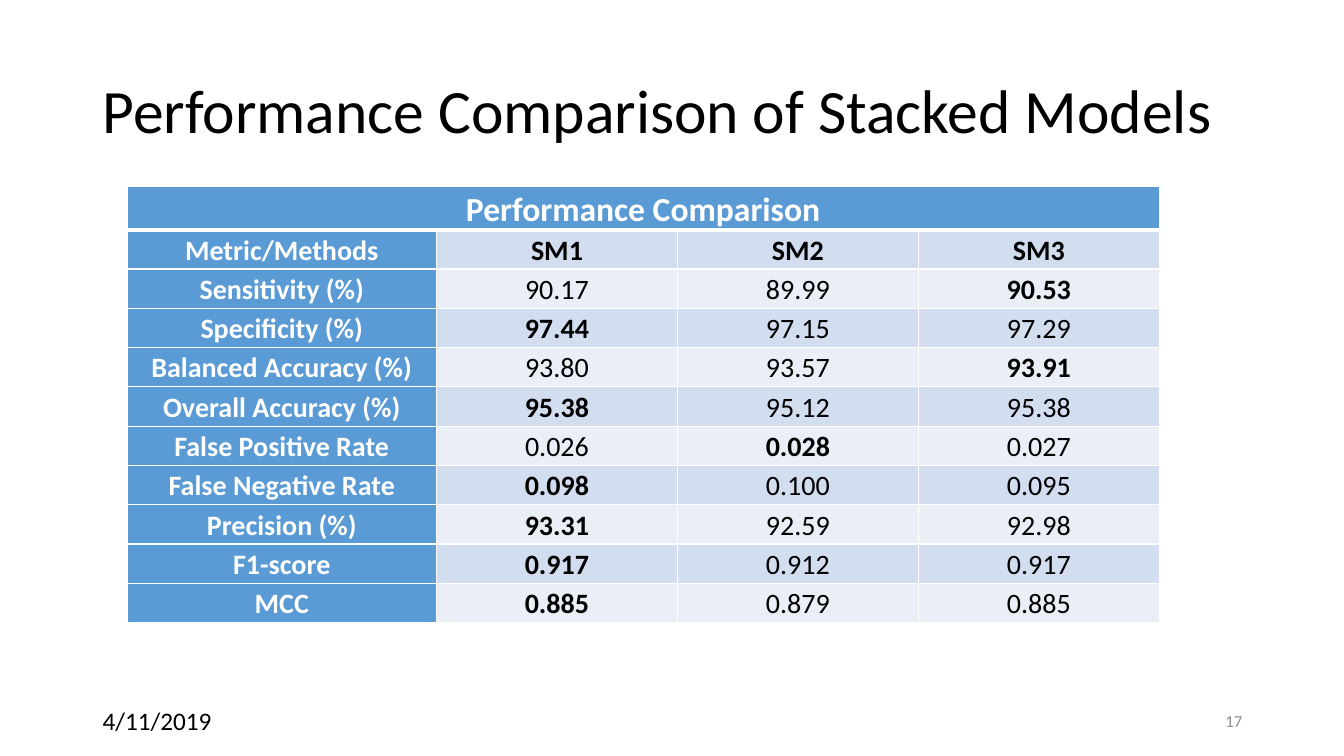
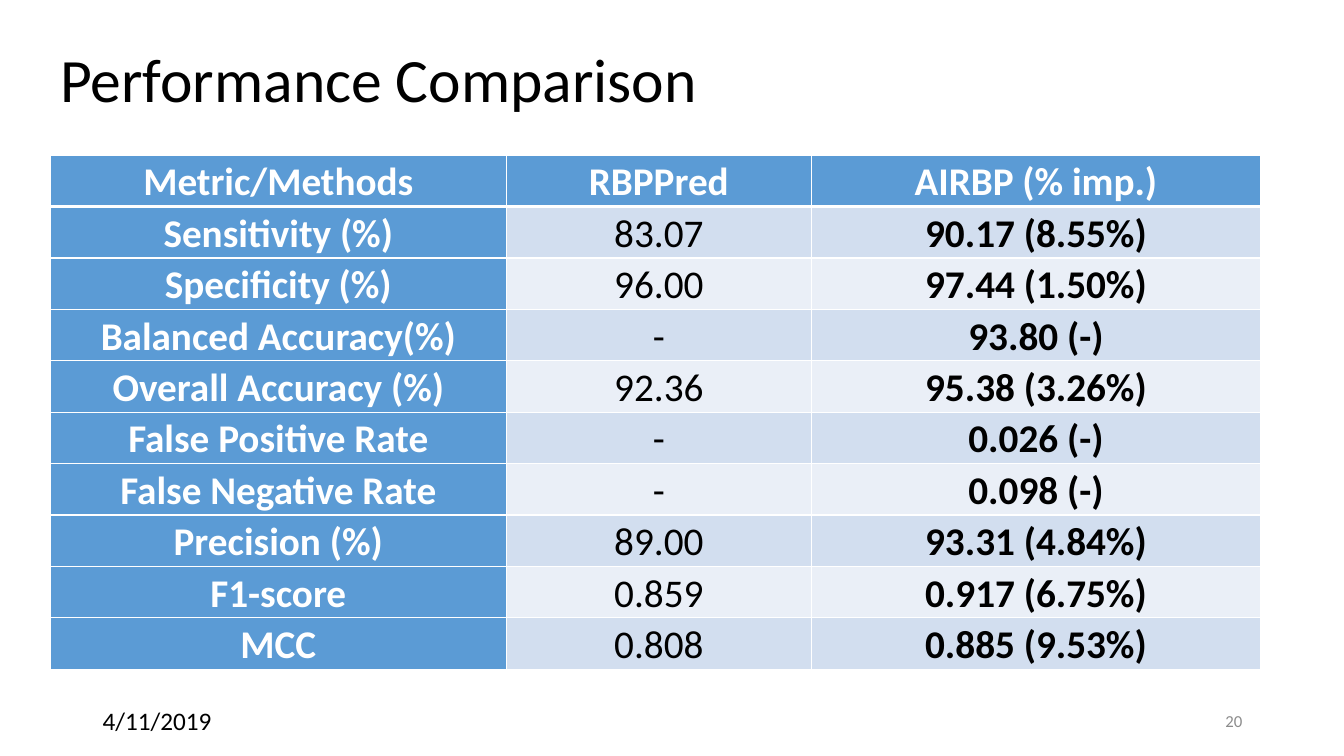
import dataclasses

import lxml.etree
import pptx
import pptx.dml.color
import pptx.enum.text
import pptx.oxml.ns
import pptx.util

Inches = pptx.util.Inches
Pt = pptx.util.Pt
ALIGN = pptx.enum.text.PP_ALIGN
ANCHOR = pptx.enum.text.MSO_ANCHOR


@dataclasses.dataclass(frozen=True)
class Theme:
    font: str = "Calibri"
    text: str = "000000"
    light: str = "FFFFFF"
    muted: str = "8C8C8C"
    header: str = "5B9BD5"
    bands: tuple = ("D2DEEF", "EAEFF7")
    title_size: int = 44
    date_size: int = 18
    number_size: int = 12
    rule: int = 1
    header_rule: int = 3


THEME = Theme()
DATE = "4/11/2019"
TITLE_SIZE = (11.5, 1.45)
FOOTER_TOP, FOOTER_SIZE = 6.95, (3, 0.4)
DATE_LEFT, NUMBER_LEFT = 0.92, 9.42

# Each body row: columns in bold, then the texts of its cells.
STACKED_CAPTION = "Performance Comparison"
STACKED_ROWS = [
    ((1, 2, 3), "Metric/Methods", "SM1", "SM2", "SM3"),
    ((3,), "Sensitivity (%)", "90.17", "89.99", "90.53"),
    ((1,), "Specificity (%)", "97.44", "97.15", "97.29"),
    ((3,), "Balanced Accuracy (%)", "93.80", "93.57", "93.91"),
    ((1,), "Overall Accuracy (%)", "95.38", "95.12", "95.38"),
    ((2,), "False Positive Rate", "0.026", "0.028", "0.027"),
    ((1,), "False Negative Rate", "0.098", "0.100", "0.095"),
    ((1,), "Precision (%)", "93.31", "92.59", "92.98"),
    ((1,), "F1-score", "0.917", "0.912", "0.917"),
    ((1,), "MCC", "0.885", "0.879", "0.885"),
]

METHOD_HEADER = ("Metric/Methods", "RBPPred", "AIRBP (% imp.)")
METHOD_ROWS = [
    ((2,), "Sensitivity (%)", "83.07", "90.17 (8.55%)"),
    ((2,), "Specificity (%)", "96.00", "97.44 (1.50%)"),
    ((2,), "Balanced Accuracy(%)", "-", "93.80 (-)"),
    ((2,), "Overall Accuracy (%)", "92.36", "95.38 (3.26%)"),
    ((2,), "False Positive Rate", "-", "0.026 (-)"),
    ((2,), "False Negative Rate", "-", "0.098 (-)"),
    ((2,), "Precision (%)", "89.00", "93.31 (4.84%)"),
    ((2,), "F1-score", "0.859", "0.917 (6.75%)"),
    ((2,), "MCC", "0.808", "0.885 (9.53%)"),
]


def rgb(value):
    return pptx.dml.color.RGBColor.from_string(value)


def set_text(tf, text, size, color, bold=False, align=ALIGN.LEFT, spacing=1.0):
    tf.text = text
    p = tf.paragraphs[0]
    p.alignment = align
    p.line_spacing = spacing
    for r in p.runs:
        r.font.name = THEME.font
        r.font.size = Pt(size)
        r.font.bold = bold
        r.font.color.rgb = rgb(color)


def add_text(s, box, text, size, color, anchor=ANCHOR.MIDDLE, **style):
    tf = s.shapes.add_textbox(*map(Inches, box)).text_frame
    tf.word_wrap = True
    tf.vertical_anchor = anchor
    set_text(tf, text, size, color, **style)


def set_borders(cell, top, bottom):
    """Rule all four sides of a cell; top and bottom are widths in points."""
    tc_pr = cell._tc.get_or_add_tcPr()
    widths = {"L": THEME.rule, "R": THEME.rule, "T": top, "B": bottom}
    for i, (side, width) in enumerate(widths.items()):
        ln = lxml.etree.Element(pptx.oxml.ns.qn("a:ln" + side), w=str(Pt(width)))
        fill = lxml.etree.SubElement(ln, pptx.oxml.ns.qn("a:solidFill"))
        lxml.etree.SubElement(fill, pptx.oxml.ns.qn("a:srgbClr"), val=THEME.light)
        tc_pr.insert(i, ln)


def style_cell(cell, text, size, fill, color, bold, top, bottom):
    cell.fill.solid()
    cell.fill.fore_color.rgb = rgb(fill)
    cell.margin_left = cell.margin_right = Inches(0.07)
    cell.margin_top = cell.margin_bottom = 0
    cell.vertical_anchor = ANCHOR.MIDDLE
    set_text(cell.text_frame, text, size, color, bold, ALIGN.CENTER, 1.07)
    set_borders(cell, top, bottom)


def add_metric_table(s, left, top, widths, header, rows, size, header_size,
                     header_height, row_height):
    """Table with a header row, a header column and banded body rows.

    A header of one text is merged across all columns.
    """
    height = header_height + row_height * len(rows)
    box = map(Inches, (left, top, sum(widths), height))
    table = s.shapes.add_table(len(rows) + 1, len(widths), *box).table
    for column, width in zip(table.columns, widths):
        column.width = Inches(width)
    for i, row in enumerate(table.rows):
        row.height = Inches(row_height if i else header_height)

    for col in range(len(widths)):
        text = header[col] if col < len(header) else ""
        style_cell(table.cell(0, col), text, header_size, THEME.header,
                   THEME.light, True, THEME.rule, THEME.header_rule)
    if len(header) == 1:
        table.cell(0, 0).merge(table.cell(0, len(widths) - 1))

    for i, (bold_columns, *texts) in enumerate(rows):
        top_rule = THEME.rule if i else THEME.header_rule
        for col, text in enumerate(texts):
            is_label = col == 0
            style_cell(table.cell(i + 1, col), text, size,
                       THEME.header if is_label else THEME.bands[i % 2],
                       THEME.light if is_label else THEME.text,
                       is_label or col in bold_columns, top_rule, THEME.rule)


def add_footer(s, number):
    add_text(s, (DATE_LEFT, FOOTER_TOP, *FOOTER_SIZE), DATE,
             THEME.date_size, THEME.text, ANCHOR.TOP)
    add_text(s, (NUMBER_LEFT, FOOTER_TOP, *FOOTER_SIZE), str(number),
             THEME.number_size, THEME.muted, align=ALIGN.RIGHT)


def add_table_slide(prs, title, title_at, number, **table):
    s = prs.slides.add_slide(prs.slide_layouts[6])
    add_text(s, (*title_at, *TITLE_SIZE), title, THEME.title_size, THEME.text,
             spacing=0.9)
    add_metric_table(s, **table)
    add_footer(s, number)


def main():
    prs = pptx.Presentation()
    prs.slide_width, prs.slide_height = Inches(13.33), Inches(7.5)
    add_table_slide(
        prs, "Performance Comparison of Stacked Models", (0.92, 0.4), 17,
        left=1.26, top=1.85, widths=(3.07, 2.39, 2.39, 2.39),
        header=(STACKED_CAPTION,), rows=STACKED_ROWS,
        size=20, header_size=24, header_height=0.42, row_height=0.39)
    add_table_slide(
        prs, "Performance Comparison", (0.5, 0.09), 20,
        left=0.5, top=1.54, widths=(4.52, 3.03, 4.45),
        header=METHOD_HEADER, rows=METHOD_ROWS,
        size=28, header_size=28, header_height=0.51, row_height=0.51)
    prs.save("out.pptx")


if __name__ == "__main__":
    main()
